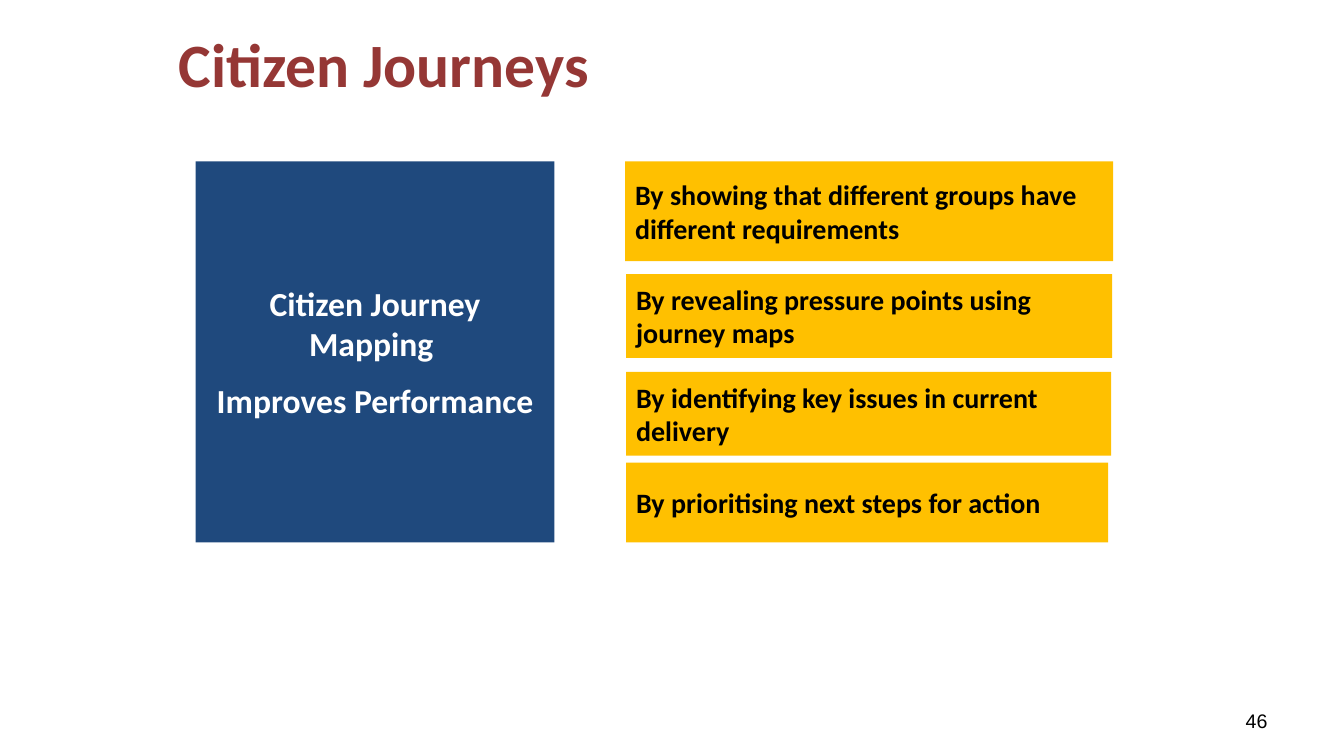
"""Build the Citizen Journeys slide."""
from pptx import Presentation
from pptx.dml.color import RGBColor
from pptx.enum import shapes, text
from pptx.util import Inches, Pt

TITLE = "Citizen Journeys"
PAGE = "46"
TOPIC = ["Citizen Journey Mapping ", "Improves Performance"]
TOPIC_BOX = (1.94, 1.6, 3.56, 3.78)
BENEFITS = [
    ("By showing that different groups have different requirements", (6.2, 1.6, 4.84, 0.99)),
    ("By revealing pressure points using journey maps", (6.21, 2.72, 4.82, 0.83)),
    ("By identifying key issues in current delivery", (6.21, 3.69, 4.81, 0.83)),
    ("By prioritising next steps for action", (6.21, 4.59, 4.78, 0.79)),
]
NAVY, AMBER, MAROON = "1F497D", "FFC000", "953735"
BLACK, WHITE = "000000", "FFFFFF"
LEFT, CENTER, RIGHT = text.PP_ALIGN.LEFT, text.PP_ALIGN.CENTER, text.PP_ALIGN.RIGHT


def rgb(value):
    return RGBColor.from_string(value)


def write(sp, lines, size, color=BLACK, font="Calibri", bold=True, align=LEFT):
    tf = sp.text_frame
    tf.word_wrap = True
    tf.auto_size = text.MSO_AUTO_SIZE.NONE
    tf.vertical_anchor = text.MSO_ANCHOR.MIDDLE
    for i, line in enumerate(lines):
        p = tf.add_paragraph() if i else tf.paragraphs[0]
        p.alignment = align
        p.space_before = Pt(size / 2 if i else 0)
        r = p.add_run()
        r.text = line
        r.font.name, r.font.size, r.font.bold = font, Pt(size), bold
        r.font.color.rgb = rgb(color)


def add_box(s, place, fill, lines, size, **style):
    sp = s.shapes.add_shape(shapes.MSO_SHAPE.RECTANGLE, *map(Inches, place))
    sp.shadow.inherit = False
    sp.fill.solid()
    sp.fill.fore_color.rgb = rgb(fill)
    sp.line.fill.background()
    write(sp, lines, size, **style)


def main():
    prs = Presentation()
    prs.slide_width, prs.slide_height = Inches(13.33), Inches(7.5)
    s = prs.slides.add_slide(prs.slide_layouts[5])

    title = s.shapes.title
    title.left, title.top, title.width, title.height = map(Inches, (1.67, 0, 10, 1.25))
    write(title, [TITLE], 44, color=MAROON)

    add_box(s, TOPIC_BOX, NAVY, TOPIC, 24, color=WHITE, align=CENTER)
    for line, place in BENEFITS:
        add_box(s, place, AMBER, [line], 20)

    page = s.shapes.add_textbox(*map(Inches, (9.56, 6.95, 3.11, 0.4)))
    write(page, [PAGE], 14, font="Arial", bold=False, align=RIGHT)

    prs.save("out.pptx")


if __name__ == "__main__":
    main()
